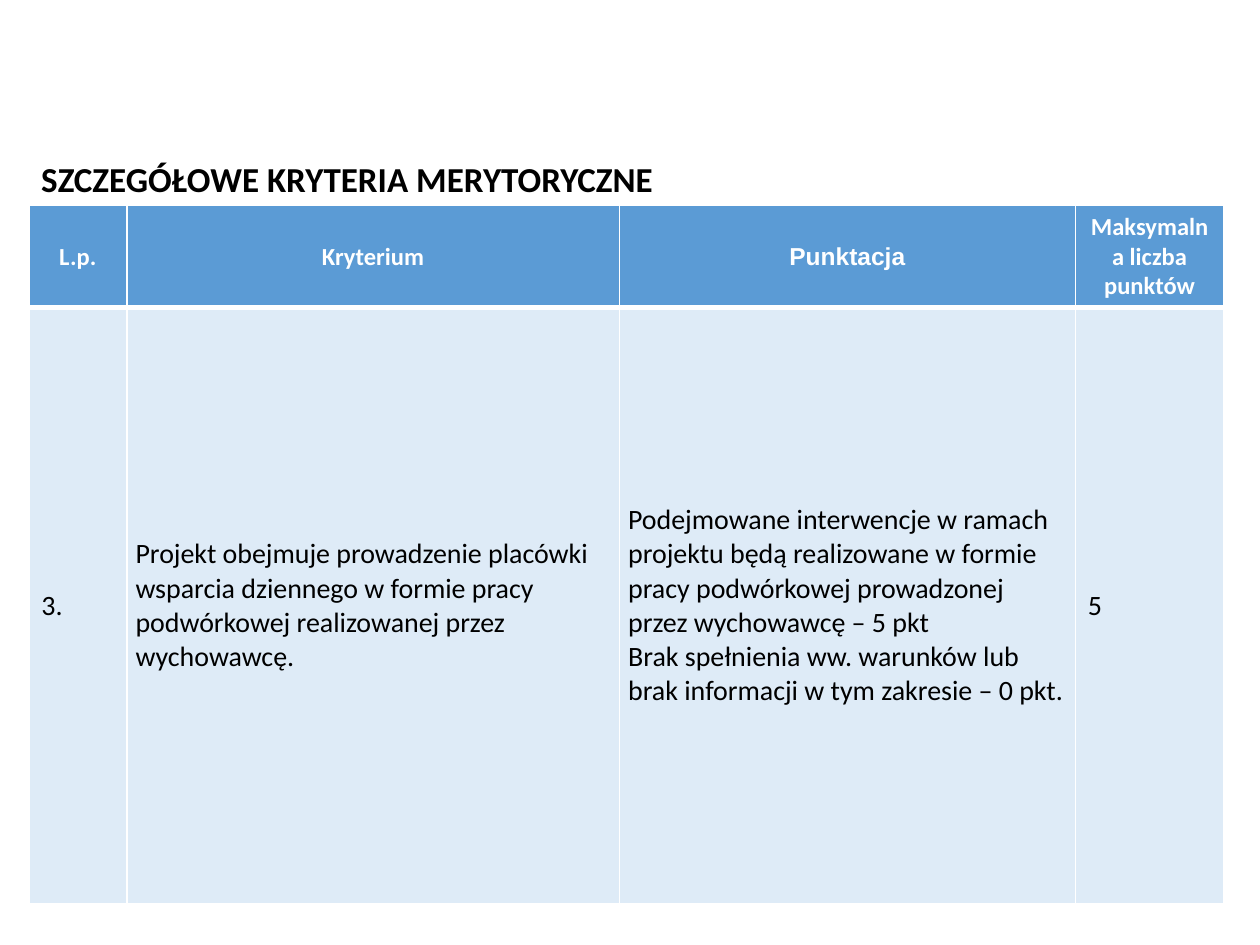
from lxml.etree import SubElement
from pptx import Presentation
from pptx.dml.color import RGBColor
from pptx.enum.text import MSO_ANCHOR as Anchor, MSO_AUTO_SIZE as AutoSize, PP_ALIGN as Align
from pptx.oxml.ns import qn
from pptx.util import Pt

COLORS = {"white": "FFFFFF", "black": "000000", "header": "5B9BD5", "body": "DEEBF7"}
COL_WIDTHS = [56, 281.5, 260.5, 85]
ROW_HEIGHTS = [57.5, 340.5]
HEADERS = [
    ("L.p.", "Calibri"),
    ("Kryterium", "Calibri"),
    ("Punktacja", "Arial"),
    ("Maksymalna liczba punktów", "Calibri"),
]
CRITERION = [
    ["3."],
    ["Projekt obejmuje prowadzenie placówki wsparcia dziennego w formie pracy "
     "podwórkowej realizowanej przez wychowawcę."],
    ["Podejmowane interwencje w ramach projektu będą realizowane w formie pracy "
     "podwórkowej prowadzonej przez wychowawcę – 5 pkt",
     "Brak spełnienia ww. warunków lub brak informacji w tym zakresie – 0 pkt."],
    ["5"],
]


class SlideBuilder:
    """Draws styled elements on one slide, with lengths in points."""

    def __init__(self, slide):
        self.slide = slide

    def color(self, name):
        return RGBColor.from_string(COLORS[name])

    def add_lines(self, tf, lines, size, color="black", bold=False, font="Calibri", align=Align.LEFT):
        for i, line in enumerate(lines):
            p = tf.add_paragraph() if i else tf.paragraphs[0]
            p.alignment = align
            r = p.add_run()
            r.text = line
            r.font.name = font
            r.font.size = Pt(size)
            r.font.bold = bold
            r.font.color.rgb = self.color(color)

    def title(self, text, x, y, w, h):
        tf = self.slide.shapes.add_textbox(Pt(x), Pt(y), Pt(w), Pt(h)).text_frame
        tf.word_wrap = True
        tf.auto_size = AutoSize.SHAPE_TO_FIT_TEXT
        tf.vertical_anchor = Anchor.MIDDLE
        self.add_lines(tf, [text], 20, bold=True)

    def table(self, x, y, widths, heights):
        s = self.slide.shapes.add_table(
            len(heights), len(widths), Pt(x), Pt(y), Pt(sum(widths)), Pt(sum(heights)))
        for col, width in zip(s.table.columns, widths):
            col.width = Pt(width)
        for row, height in zip(s.table.rows, heights):
            row.height = Pt(height)
        return s.table

    def cell(self, cell, lines, fill, top=1, bottom=1, **style):
        self.borders(cell, {"L": 1, "R": 1, "T": top, "B": bottom})
        cell.fill.solid()
        cell.fill.fore_color.rgb = self.color(fill)
        cell.vertical_anchor = Anchor.MIDDLE
        self.add_lines(cell.text_frame, lines, **style)

    def borders(self, cell, widths):
        props = cell._tc.get_or_add_tcPr()
        for side, width in widths.items():
            ln = SubElement(props, qn(f"a:ln{side}"), w=str(Pt(width)))
            fill = SubElement(ln, qn("a:solidFill"))
            SubElement(fill, qn("a:srgbClr"), val=COLORS["white"])


def main():
    prs = Presentation()
    prs.slide_width, prs.slide_height = Pt(720), Pt(540)
    b = SlideBuilder(prs.slides.add_slide(prs.slide_layouts[6]))

    table = b.table(16.5, 117.5, COL_WIDTHS, ROW_HEIGHTS)
    for i, (text, font) in enumerate(HEADERS):
        b.cell(table.cell(0, i), [text], "header", bottom=3,
               size=14, color="white", bold=True, font=font, align=Align.CENTER)
    for i, lines in enumerate(CRITERION):
        b.cell(table.cell(1, i), lines, "body", top=3, size=16)
    for i in (1, 2):
        c = table.cell(1, i)
        c.margin_left = c.margin_right = Pt(5)
        c.margin_top = c.margin_bottom = Pt(0)
    p = table.cell(1, 1).text_frame.paragraphs[0]
    p.space_after = Pt(4)
    b.title("SZCZEGÓŁOWE KRYTERIA MERYTORYCZNE", 16.5, 86, 673, 31.5)

    prs.save("out.pptx")


if __name__ == "__main__":
    main()
